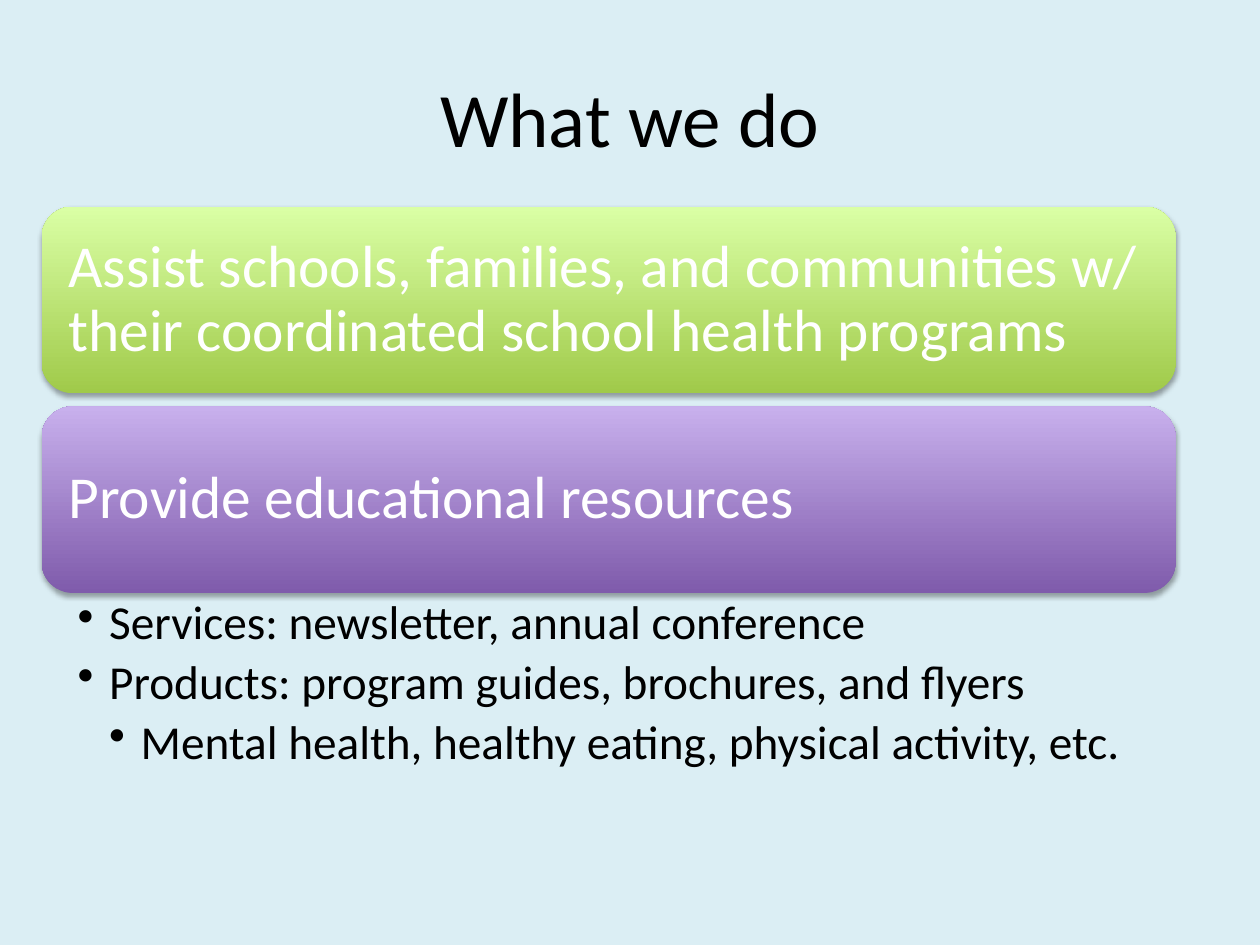
from dataclasses import dataclass

from lxml.etree import SubElement
from pptx import Presentation
from pptx.dml.color import RGBColor
from pptx.enum.shapes import MSO_SHAPE as Shape
from pptx.enum.text import MSO_ANCHOR as Anchor, PP_ALIGN as Align
from pptx.oxml.ns import qn
from pptx.slide import Slide
from pptx.text.text import TextFrame, _Paragraph as Paragraph
from pptx.util import Pt

FONT = "Calibri"
COLORS = {
    "background": "DBEEF4",
    "text": "000000",
    "card_text": "FFFFFF",
    "green_dark": "A0CA4A",
    "green_light": "DAFFA5",
    "purple_dark": "7F5BAB",
    "purple_light": "C8B0ED",
    "shadow": "000000",
}
CARD_LEFT, CARD_TOP = 23.8, 118.1
CARD_WIDTH, CARD_HEIGHT, CARD_PITCH = 648, 106.6, 114.1
BULLET_INDENT = 18


@dataclass
class Card:
    text: str
    dark: str
    light: str


@dataclass
class Bullet:
    text: str
    level: int = 1


CARDS = [
    Card("Assist schools, families, and communities w/ their coordinated school health programs",
         "green_dark", "green_light"),
    Card("Provide educational resources", "purple_dark", "purple_light"),
]
BULLETS = [
    Bullet("Services: newsletter, annual conference"),
    Bullet("Products: program guides, brochures, and flyers"),
    Bullet("Mental health, healthy eating, physical activity, etc.", level=2),
]


def rgb(name: str) -> RGBColor:
    return RGBColor.from_string(COLORS[name])


def set_frame(frame: TextFrame, anchor: Anchor, left: float, top: float,
              right: float, bottom: float) -> None:
    frame.word_wrap = True
    frame.vertical_anchor = anchor
    frame.margin_left, frame.margin_top = Pt(left), Pt(top)
    frame.margin_right, frame.margin_bottom = Pt(right), Pt(bottom)


def write(paragraph: Paragraph, text: str, size: float, color: str,
          align: Align = Align.LEFT, line_spacing: float = 0.9) -> None:
    paragraph.text = text
    paragraph.alignment = align
    paragraph.line_spacing = line_spacing
    paragraph.font.name = FONT
    paragraph.font.size = Pt(size)
    paragraph.font.color.rgb = rgb(color)


def add_shadow(shape) -> None:
    shape.shadow.inherit = False
    effects = shape._element.spPr.find(qn("a:effectLst"))
    shadow = SubElement(effects, qn("a:outerShdw"), blurRad=str(Pt(3.1)),
                        dist=str(Pt(1.8)), dir="5400000", rotWithShape="0")
    color = SubElement(shadow, qn("a:srgbClr"), val=COLORS["shadow"])
    SubElement(color, qn("a:alpha"), val="35000")


def add_title(slide: Slide, text: str) -> None:
    box = slide.shapes.add_textbox(Pt(36), Pt(21.6), Pt(648), Pt(90))
    set_frame(box.text_frame, Anchor.MIDDLE, 7.2, 3.6, 7.2, 3.6)
    write(box.text_frame.paragraphs[0], text, 44, "text", Align.CENTER, 1.0)


def add_card(slide: Slide, card: Card, top: float) -> None:
    shape = slide.shapes.add_shape(Shape.ROUNDED_RECTANGLE, Pt(CARD_LEFT), Pt(top),
                                   Pt(CARD_WIDTH), Pt(CARD_HEIGHT))
    shape.line.fill.background()
    shape.fill.gradient()
    shape.fill.gradient_angle = 90
    for stop, position, color in zip(shape.fill.gradient_stops, (0, 1),
                                     (card.dark, card.light)):
        stop.position = position
        stop.color.rgb = rgb(color)
    add_shadow(shape)
    set_frame(shape.text_frame, Anchor.MIDDLE, 10.2, 10.2, 10.2, 10.2)
    write(shape.text_frame.paragraphs[0], card.text, 34, "card_text")


def add_bullets(slide: Slide, bullets: list[Bullet], top: float) -> None:
    box = slide.shapes.add_textbox(Pt(CARD_LEFT), Pt(top), Pt(CARD_WIDTH), Pt(108))
    frame = box.text_frame
    set_frame(frame, Anchor.TOP, 20.6, 3.6, 19, 3.6)
    for index, bullet in enumerate(bullets):
        paragraph = frame.add_paragraph() if index else frame.paragraphs[0]
        write(paragraph, bullet.text, 27, "text")
        paragraph.level = bullet.level
        paragraph.space_after = Pt(5)
        properties = paragraph._p.get_or_add_pPr()
        properties.set("marL", str(Pt(BULLET_INDENT * bullet.level)))
        properties.set("indent", str(Pt(-BULLET_INDENT)))
        mark = properties.makeelement(qn("a:buChar"), {"char": "•"})
        properties.find(qn("a:defRPr")).addprevious(mark)


def main() -> None:
    presentation = Presentation()
    presentation.slide_width, presentation.slide_height = Pt(720), Pt(540)
    slide = presentation.slides.add_slide(presentation.slide_layouts[6])
    slide.background.fill.solid()
    slide.background.fill.fore_color.rgb = rgb("background")

    # Title
    add_title(slide, "What we do")

    # Gradient cards
    for index, card in enumerate(CARDS):
        add_card(slide, card, CARD_TOP + index * CARD_PITCH)

    # Details under the last card
    add_bullets(slide, BULLETS, CARD_TOP + CARD_PITCH + CARD_HEIGHT)

    presentation.save("out.pptx")


if __name__ == "__main__":
    main()
